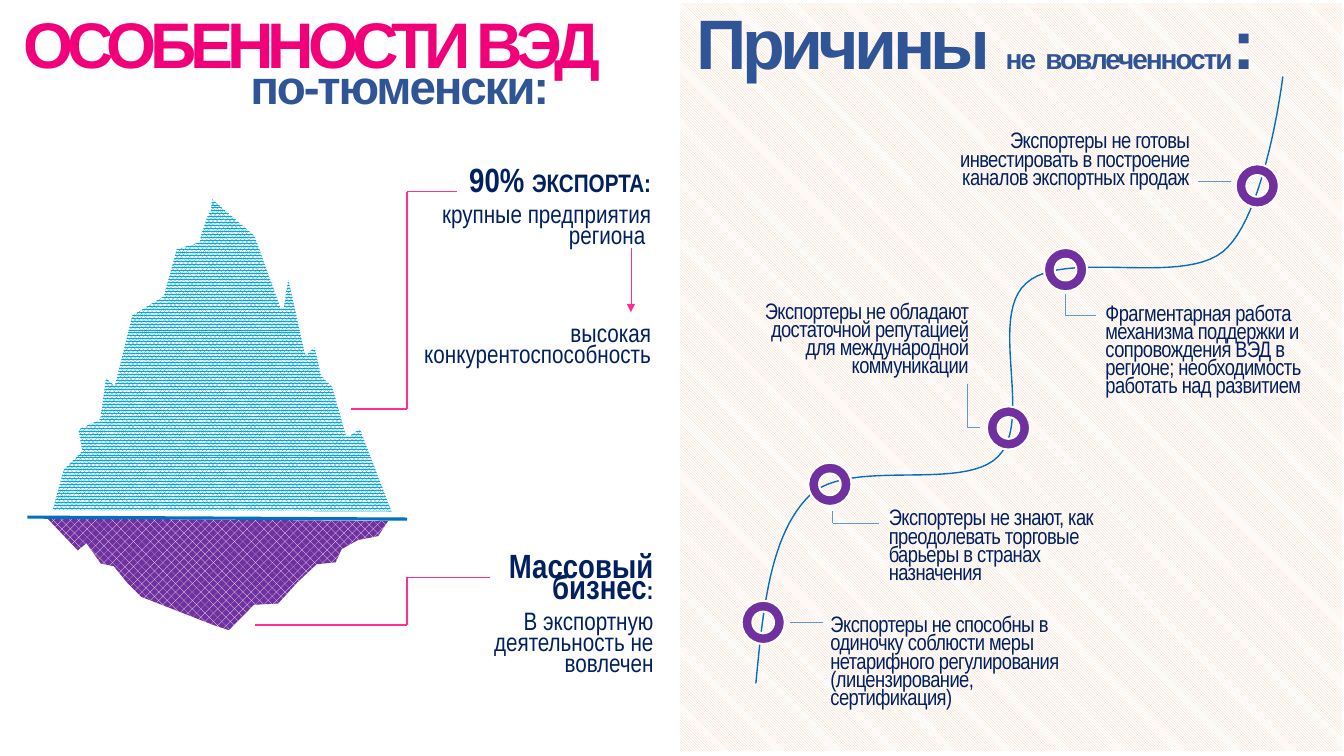
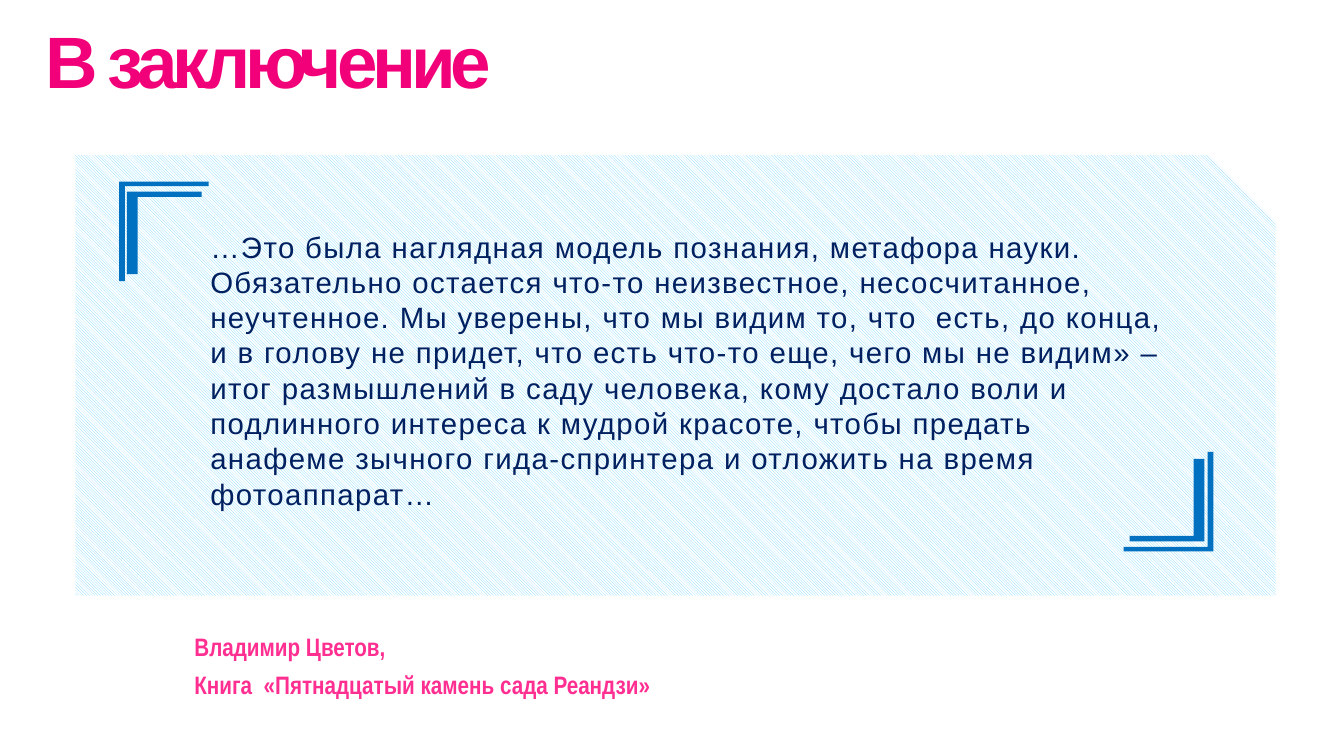
from itertools import pairwise

from lxml.etree import SubElement
from pptx import Presentation
from pptx.dml.color import RGBColor
from pptx.enum.dml import MSO_PATTERN
from pptx.enum.shapes import MSO_CONNECTOR, MSO_SHAPE
from pptx.enum.text import MSO_ANCHOR, PP_ALIGN
from pptx.oxml.ns import qn
from pptx.util import Cm, Pt

# Shared look
MAGENTA, PINK, NAVY, TITLE_BLUE = "F20079", "FF2F92", "002060", "2F5597"
BLUE, LEADER_BLUE, PURPLE, WHITE = "0070C0", "5B9BD5", "7030A0", "FFFFFF"
TITLE = dict(font="Arial", bold=True, anchor=MSO_ANCHOR.MIDDLE, leading=27, after=6)
BODY = dict(font="Arial Narrow", color=NAVY)
ICEBERG_TEXT = dict(BODY, size=18, align=PP_ALIGN.RIGHT, leading=15, after=6)
REASON_TEXT = dict(BODY, size=16, leading=13, spacing=-0.4)

# Outlines, in centimetres
ICE_ABOVE = [
    (5.31, 4.93), (5.28, 5.28), (5.21, 5.38), (5.13, 5.61), (5.03, 5.89), (5, 6.07),
    (4.42, 6.25), (4.09, 7.44), (3.3, 7.92), (2.87, 9.65), (2.64, 9.45), (2.49, 10.54),
    (1.93, 10.8), (2.03, 11.35), (1.57, 11.81), (1.3, 12.8), (1.02, 12.9), (9.93, 12.93),
    (9.09, 10.74), (8.76, 10.97), (8.41, 9.73), (8.13, 9.45), (7.95, 8.66), (7.72, 8.89),
    (7.26, 6.81), (7.11, 7.75), (6.45, 5.92),
]
ICE_BELOW = [
    (1.19, 13.06), (1.96, 13.87), (2.18, 13.69), (2.54, 14.2), (2.87, 14.27), (3.2, 14.68),
    (3.56, 15.04), (5.38, 15.75), (5.77, 15.88), (6.4, 15.24), (7.01, 15.21), (7.49, 14.68),
    (7.98, 14.22), (8.46, 14.17), (8.61, 13.84), (9.02, 13.61), (9.53, 13.51), (9.78, 13.13),
]
ROAD_START = (19.05, 17.22)
ROAD_BENDS = [
    ((19.23, 15.34), (19.41, 13.44), (20.42, 12.47)),
    ((21.44, 11.53), (24.26, 12.4), (25.15, 11.51)),
    ((26.06, 10.62), (24.89, 8), (25.86, 7.14)),
    ((26.8, 6.27), (29.72, 7.21), (30.81, 6.35)),
    ((31.9, 5.49), (32.33, 1.93), (32.33, 1.93)),
]

# Reasons: ring corner, text box, alignment, leader points, wording
REASONS = [
    ((18.69, 15.14), (20.68, 15.47, 6.86, 3.02), PP_ALIGN.LEFT,
     [(19.91, 15.67), (20.73, 15.67)],
     "Экспортеры не способны в одиночку соблюсти меры нетарифного регулирования "
     "(лицензирование, сертификация)"),
    ((20.37, 11.66), (22.15, 12.78, 6.22, 2.11), PP_ALIGN.LEFT,
     [(20.98, 12.88), (20.98, 13.18), (22.15, 13.18)],
     "Экспортеры не знают, как преодолевать торговые барьеры в странах назначения"),
    ((24.87, 10.24), (18.82, 7.57, 5.84, 2.11), PP_ALIGN.RIGHT,
     [(24.38, 9.68), (24.38, 10.77), (24.69, 10.77)],
     "Экспортеры не обладают достаточной репутацией для международной коммуникации"),
    ((26.31, 6.25), (27.61, 7.62, 6.26, 2.57), PP_ALIGN.LEFT,
     [(26.85, 7.42), (26.85, 7.95), (27.61, 7.95)],
     "Фрагментарная работа механизма поддержки и сопровождения ВЭД в регионе; "
     "необходимость работать над развитием"),
    ((31.14, 4.14), (23.27, 3.28, 6.96, 1.65), PP_ALIGN.RIGHT,
     [(30.2, 4.57), (31.01, 4.57)],
     "Экспортеры не готовы инвестировать в построение каналов экспортных продаж"),
]

QUOTE = (
    "…Это была наглядная модель познания, метафора науки. Обязательно остается что-то "
    "неизвестное, несосчитанное, неучтенное. Мы уверены, что мы видим то, что  есть, до "
    "конца, и в голову не придет, что есть что-то еще, чего мы не видим» – итог размышлений "
    "в саду человека, кому достало воли и подлинного интереса к мудрой красоте, чтобы "
    "предать анафеме зычного гида-спринтера и отложить на время фотоаппарат…"
)


def rgb(value):
    return RGBColor.from_string(value)


def add_run(paragraph, wording, font, size, color, bold=False, spacing=0):
    run = paragraph.add_run()
    run.text = wording
    run.font.name, run.font.size, run.font.bold = font, Pt(size), bold
    run.font.color.rgb = rgb(color)
    if spacing:
        run._r.get_or_add_rPr().set("spc", str(round(spacing * 100)))


def add_text(slide, box, paragraphs, align=PP_ALIGN.LEFT, anchor=MSO_ANCHOR.TOP,
             leading=None, after=0, **run_format):
    """Each paragraph is a string or a list of (wording, format changes)."""
    frame = slide.shapes.add_textbox(*map(Cm, box)).text_frame
    frame.word_wrap, frame.vertical_anchor = True, anchor
    for number, runs in enumerate(paragraphs):
        paragraph = frame.add_paragraph() if number else frame.paragraphs[0]
        paragraph.alignment, paragraph.space_after = align, Pt(after)
        if leading:
            paragraph.line_spacing = Pt(leading)
        for wording, changes in [(runs, {})] if isinstance(runs, str) else runs:
            add_run(paragraph, wording, **{**run_format, **changes})


def paint(shape, fill=None, pattern=None, back=WHITE, line=None, width=1):
    shape.shadow.inherit = False
    if pattern:
        shape.fill.patterned()
        shape.fill.pattern = MSO_PATTERN.from_xml(pattern)
        shape.fill.fore_color.rgb, shape.fill.back_color.rgb = rgb(fill), rgb(back)
    elif fill:
        shape.fill.solid()
        shape.fill.fore_color.rgb = rgb(fill)
    else:
        shape.fill.background()
    if line:
        shape.line.color.rgb, shape.line.width = rgb(line), Pt(width)
    else:
        shape.line.fill.background()


def add_shape(slide, kind, box, adjustments=(), rotation=0, **look):
    shape = slide.shapes.add_shape(kind, *map(Cm, box))
    for number, value in enumerate(adjustments):
        shape.adjustments[number] = value
    shape.rotation = rotation
    paint(shape, **look)


def add_outline(slide, points, close=True, **look):
    first, *rest = [(Cm(x), Cm(y)) for x, y in points]
    builder = slide.shapes.build_freeform(*first)
    builder.add_line_segments(rest, close=close)
    paint(builder.convert_to_shape(), **look)


def add_lines(slide, points, color, width, arrow=False):
    for start, end in pairwise(points):
        line = slide.shapes.add_connector(MSO_CONNECTOR.STRAIGHT, *map(Cm, start + end))
        line.line.color.rgb, line.line.width = rgb(color), Pt(width)
        if arrow:
            SubElement(line.get_or_add_ln(), qn("a:tailEnd"), type="triangle")
        SubElement(line._element.spPr, qn("a:effectLst"))


def bezier_points(start, bends, steps=24):
    points = [start]
    for bend in bends:
        corners = (points[-1], *bend)
        for step in range(1, steps + 1):
            t = step / steps
            weights = ((1 - t) ** 3, 3 * t * (1 - t) ** 2, 3 * t * t * (1 - t), t ** 3)
            points.append(tuple(sum(w * c[axis] for w, c in zip(weights, corners))
                                for axis in (0, 1)))
    return points


def add_bracket(slide, outer_center, inner_center, rotation):
    for (x, y), (w, h), adjustments in (
        (inner_center, (2.08, 1.88), (0.143, 0.072)),
        (outer_center, (2.51, 2.26), (0.064, 0.052)),
    ):
        add_shape(slide, MSO_SHAPE.CORNER, (x - w / 2, y - h / 2, w, h), adjustments,
                  rotation, fill=BLUE)


def add_iceberg(slide):
    add_outline(slide, ICE_BELOW, fill=WHITE, back=PURPLE, pattern="pct40")
    add_lines(slide, [(0.69, 13.03), (10.26, 13.08)], BLUE, 2.25)
    add_outline(slide, ICE_ABOVE, fill="00A8E6", pattern="pct80", line=WHITE, width=2.25)
    # Leaders and labels
    add_lines(slide, [(8.84, 10.31), (10.26, 10.31), (10.26, 4.83), (11.51, 4.83)], PINK, 1)
    add_lines(slide, [(6.43, 15.75), (10.26, 15.75), (10.26, 14.55), (12.34, 14.55)], PINK, 1)
    add_lines(slide, [(15.9, 6.25), (15.9, 7.87)], PINK, 0.5, arrow=True)
    headline = dict(size=24, bold=True)
    add_text(slide, (10.46, 4.37, 6.2, 2.2),
             [[("90% ", headline), ("ЭКСПОРТА:", dict(bold=True))],
              "крупные предприятия региона "], **ICEBERG_TEXT)
    add_text(slide, (10.24, 8.1, 6.42, 1.6), ["высокая конкурентоспособность"], **ICEBERG_TEXT)
    add_text(slide, (10.52, 14.1, 6.2, 3.6),
             [[("Массовый бизнес", headline), (":", dict(bold=True))],
              "В экспортную деятельность не вовлечен"], **ICEBERG_TEXT)


def add_reasons(slide):
    add_outline(slide, bezier_points(ROAD_START, ROAD_BENDS), close=False, line=BLUE)
    for ring, box, align, leader, wording in REASONS:
        add_shape(slide, MSO_SHAPE.DONUT, (*ring, 1.09, 1.09), fill=PURPLE,
                  line=WHITE, width=1.5)
        add_text(slide, box, [wording], align=align, **REASON_TEXT)
        add_lines(slide, leader, LEADER_BLUE, 0.5)


def build_features(slide):
    # Right panel and titles
    add_shape(slide, MSO_SHAPE.RECTANGLE, (17.12, 0.05, 16.74, 18.9), fill="F8CBAD",
              pattern="dkDnDiag", line=WHITE, width=1.5)
    add_text(slide, (17.3, 1.02, 14.88, 1.22),
             [[("Причины ", {}), ("не  вовлеченности", dict(size=20, spacing=-1.5)),
               (":", {})]], **TITLE, size=50, color=TITLE_BLUE, spacing=-3.3)
    add_text(slide, (0, 0.58, 15.39, 1.6), ["ОСОБЕННОСТИ ВЭД"], align=PP_ALIGN.RIGHT,
             **{**TITLE, "leading": 38}, size=46, color=MAGENTA, spacing=-4.3)
    add_text(slide, (2, 1.78, 12.1, 1.22), ["по-тюменски:"], align=PP_ALIGN.RIGHT,
             **TITLE, size=34, color=TITLE_BLUE, spacing=-1.5)
    add_iceberg(slide)
    add_reasons(slide)


def build_conclusion(slide):
    add_text(slide, (0.89, 1.5, 32, 1.22), ["В заключение"], **TITLE, size=52,
             color=MAGENTA, spacing=-3.7)
    # Quote card
    add_shape(slide, MSO_SHAPE.SNIP_1_RECTANGLE, (1.9, 3.91, 30.25, 11.1), [0.152],
              fill="76D6FF", pattern="ltDnDiag")
    add_text(slide, (5.05, 5.64, 24.79, 8.28), [QUOTE], font="Arial", size=21,
             color=NAVY, spacing=1)
    add_bracket(slide, (29.45, 12.64), (29.41, 12.6), 270)
    add_bracket(slide, (4.13, 5.83), (4.14, 5.87), 90)
    # Author and book
    add_text(slide, (4.65, 15.95, 17.55, 1.9),
             ["Владимир Цветов,", "Книга  «Пятнадцатый камень сада Реандзи»"],
             anchor=MSO_ANCHOR.MIDDLE, leading=13.6, after=13.6, font="Arial Narrow",
             size=18, color=PINK, bold=True)


def main():
    deck = Presentation()
    deck.slide_width, deck.slide_height = Cm(33.87), Cm(19.05)
    for build in (build_features, build_conclusion):
        build(deck.slides.add_slide(deck.slide_layouts[6]))
    deck.save("out.pptx")


if __name__ == "__main__":
    main()
